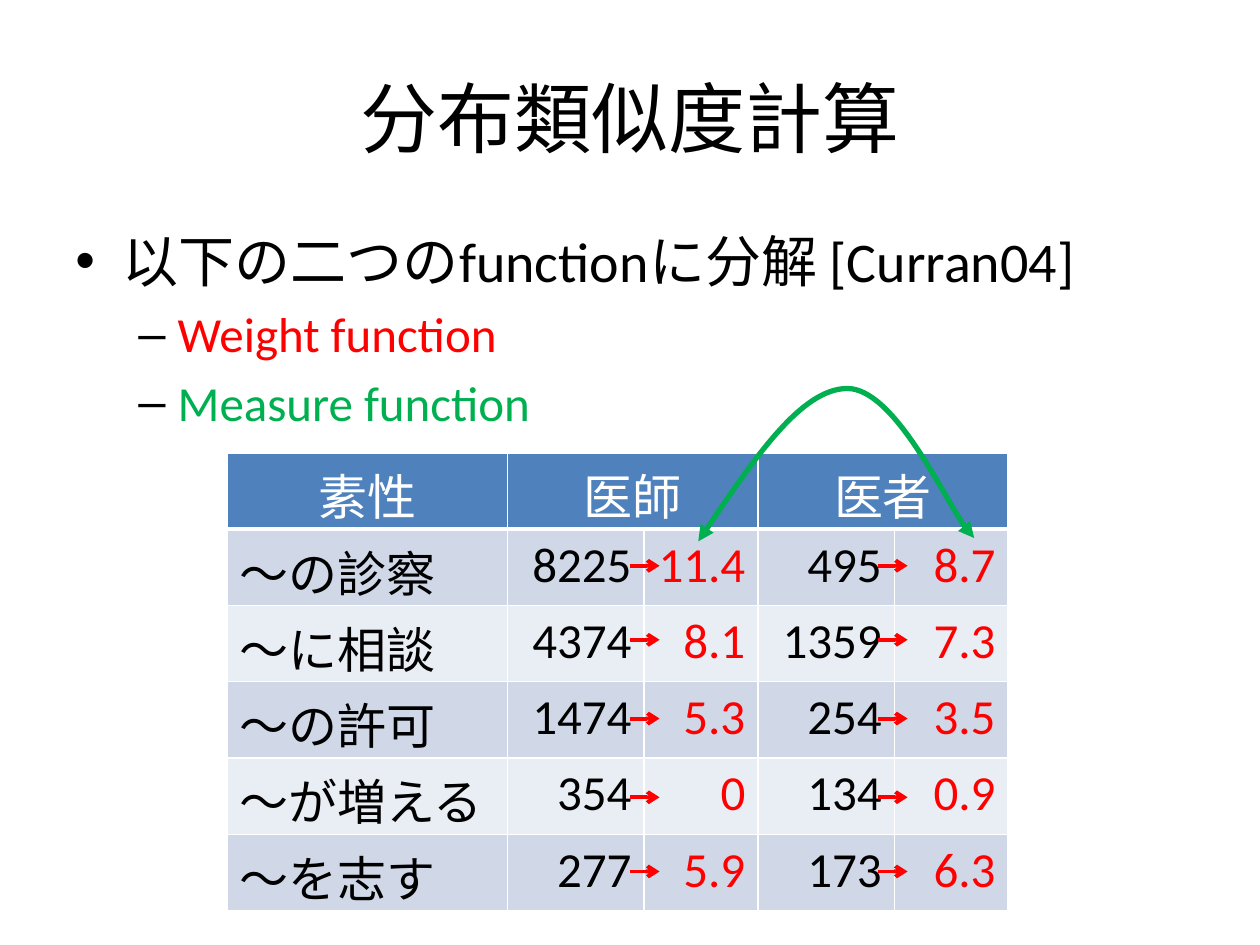
from lxml import etree
from pptx import Presentation
from pptx import util as u
from pptx.dml.color import RGBColor
from pptx.enum import shapes, text
from pptx.oxml.ns import qn

HUES = {"black": "000000", "white": "FFFFFF", "red": "FF0000", "green": "00B050",
        "head": "4F81BD", "odd": "D0D8E8", "even": "E9EDF4"}
LEFT, MID, RIGHT = text.PP_ALIGN.LEFT, text.PP_ALIGN.CENTER, text.PP_ALIGN.RIGHT


def rgb(hue):
    return RGBColor.from_string(HUES[hue])


def add(node, tag, **attrs):
    return etree.SubElement(node, qn(tag), {k: str(v) for k, v in attrs.items()})


class Deck:
    font = "Calibri"

    def __init__(self, wide, high):
        self.prs = Presentation()
        self.prs.slide_width, self.prs.slide_height = u.Pt(wide), u.Pt(high)
        self.slide = self.prs.slides.add_slide(self.prs.slide_layouts[6])

    def run(self, para, words, size, hue):
        run = para.add_run()
        run.text = words
        run.font.name, run.font.size, run.font.bold = self.font, u.Pt(size), False
        run.font.color.rgb = rgb(hue)

    def box(self, x, y, w, h, anchor):
        frame = self.slide.shapes.add_textbox(*map(u.Pt, (x, y, w, h))).text_frame
        frame.word_wrap = True
        frame.vertical_anchor = anchor
        return frame

    def title(self, words, *area):
        para = self.box(*area, text.MSO_ANCHOR.MIDDLE).paragraphs[0]
        para.alignment = MID
        self.run(para, words, 44, "black")

    def bullets(self, items, *area):
        """Each item is level, words and hue."""
        frame = self.box(*area, text.MSO_ANCHOR.TOP)
        looks = [("•", 32, 27, 27), ("–", 28, 58.5, 22.5)]
        for i, (level, words, hue) in enumerate(items):
            para = frame.add_paragraph() if i else frame.paragraphs[0]
            mark, size, left, hang = looks[level]
            para.level = level
            para.space_before = u.Pt(size * 0.2)
            props = para._p.get_or_add_pPr()
            props.set("marL", str(u.Pt(left)))
            props.set("indent", str(-u.Pt(hang)))
            add(add(props, "a:buClr"), "a:srgbClr", val=HUES["black"])
            add(props, "a:buFont", typeface="Arial")
            add(props, "a:buChar", char=mark)
            self.run(para, words, size, hue)

    def cell(self, cell, words, fill, hue, align, base=1):
        props = cell._tc.get_or_add_tcPr()
        for side, width in (("L", 1), ("R", 1), ("T", 1), ("B", base)):
            line = add(props, f"a:ln{side}", w=u.Pt(width))
            add(add(line, "a:solidFill"), "a:srgbClr", val=HUES["white"])
        cell.fill.solid()
        cell.fill.fore_color.rgb = rgb(fill)
        para = cell.text_frame.paragraphs[0]
        para.alignment = align
        if words:
            self.run(para, words, 28, hue)

    def table(self, head, rows, cols, x, y, high):
        count = len(rows) + 1
        grid = self.slide.shapes.add_table(
            count, len(cols), *map(u.Pt, (x, y, sum(cols), high * count))).table
        for col, wide in zip(grid.columns, cols):
            col.width = u.Pt(wide)
        for row in grid.rows:
            row.height = u.Pt(high)
        for c, words in enumerate(head):
            self.cell(grid.cell(0, c), words, "head", "white", MID, 3)
            if not words:
                grid.cell(0, c - 1).merge(grid.cell(0, c))
        for r, row in enumerate(rows, 1):
            for c, words in enumerate(row):
                self.cell(grid.cell(r, c), words, "odd" if r % 2 else "even",
                          "red" if c in (2, 4) else "black", RIGHT if c else LEFT)

    def stroke(self, shape, hue, width, **ends):
        shape.line.color.rgb = rgb(hue)
        shape.line.width = u.Pt(width)
        for end, kind in ends.items():
            add(shape.line._get_or_add_ln(), f"a:{end}End", type=kind)

    def arrow(self, x, y, long):
        line = self.slide.shapes.add_connector(
            shapes.MSO_CONNECTOR.STRAIGHT, *map(u.Pt, (x, y, x + long, y)))
        self.stroke(line, "red", 2.25, tail="arrow")
        add(line._element.spPr, "a:effectLst")

    def curve(self, start, *points):
        """Draw Bezier pieces: two control points and an end point each."""
        pen = self.slide.shapes.build_freeform(*map(u.Pt, start))
        pen.add_line_segments([tuple(map(u.Pt, p)) for p in points], close=False)
        shape = pen.convert_to_shape()
        shape.shadow.inherit = False
        shape.fill.background()
        self.stroke(shape, "green", 3, head="triangle", tail="triangle")
        track = shape._element.spPr.find(".//" + qn("a:path"))
        steps = track.findall(qn("a:lnTo"))
        for i in range(0, len(steps), 3):
            bend = add(track, "a:cubicBezTo")
            for step in steps[i:i + 3]:
                bend.append(step[0])
                track.remove(step)


def main():
    deck = Deck(720, 540)
    deck.title("分布類似度計算", 36, 21.6, 648, 90)
    deck.bullets([(0, "以下の二つのfunctionに分解 [Curran04]", "black"),
                  (1, "Weight function", "red"),
                  (1, "Measure function", "green")], 36, 126, 648, 356.4)
    deck.table(["素性", "医師", "", "医者", ""],
               [["～の診察", "8225", "11.4", "495", "8.7"],
                ["～に相談", "4374", "8.1", "1359", "7.3"],
                ["～の許可", "1474", "5.3", "254", "3.5"],
                ["～が増える", "354", "0", "134", "0.9"],
                ["～を志す", "277", "5.9", "173", "6.3"]],
               [160.5, 78, 65, 78, 65], 129.6, 258.75, 43.6)
    for x in (360, 501.75):
        for y in (323.3, 365.6, 410.6, 455.6, 498):
            deck.arrow(x, y, 16.9)
    deck.curve((399, 309.4), (428.4, 265.7), (457.9, 222.3), (484, 222),
               (510.5, 221.8), (548.6, 303.1), (556.7, 307.5))
    deck.prs.save("out.pptx")


if __name__ == "__main__":
    main()
